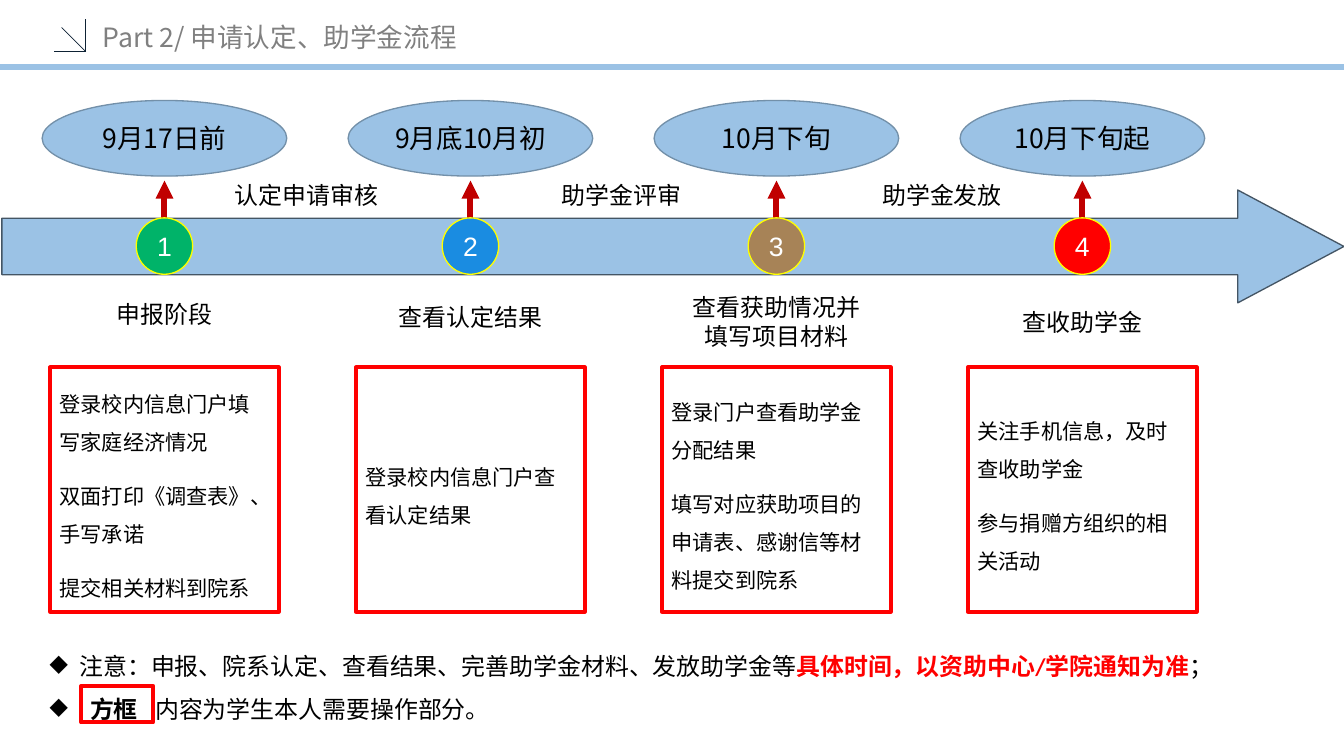
from dataclasses import dataclass

from lxml import etree
from pptx import Presentation
from pptx import util as u
from pptx.dml.color import RGBColor
from pptx.enum import shapes, text
from pptx.oxml import ns

Cm, Pt = u.Cm, u.Pt
MSO, ALIGN, ANCHOR = shapes.MSO_SHAPE, text.PP_ALIGN, text.MSO_ANCHOR


@dataclass(frozen=True)
class Theme:
    blue: str = "9BC2E5"
    navy: str = "0E2234"
    arrow_edge: str = "445564"
    oval_edge: str = "7390A9"
    yellow: str = "FFFF00"
    red: str = "FF0000"
    dark_red: str = "C00000"
    grey: str = "808080"
    black: str = "000000"
    white: str = "FFFFFF"
    cjk: str = "Noto Sans CJK SC"
    digits: str = "Arial"
    notes: str = "Calibri"
    large: int = 20
    label: int = 18
    body: int = 16


T = Theme()
SLIDE_W, SLIDE_H = 35.71, 20.09

# date, badge colour, stage lines, (drop, width, height) of stage label, tasks
STEPS = [
    ("9月17日前", "00B369", ["申报阶段"], (5.18, 3.99, 1.0),
     ["登录校内信息门户填写家庭经济情况", "双面打印《调查表》、手写承诺", "提交相关材料到院系"]),
    ("9月底10月初", "1A8CE1", ["查看认定结果"], (5.25, 4.67, 1.02),
     ["登录校内信息门户查看认定结果"]),
    ("10月下旬", "A78357", ["查看获助情况并", "填写项目材料"], (4.98, 6.07, 1.8),
     ["登录门户查看助学金分配结果", "填写对应获助项目的申请表、感谢信等材料提交到院系"]),
    ("10月下旬起", T.red, ["查收助学金"], (5.38, 3.99, 1.02),
     ["关注手机信息，及时查收助学金", "参与捐赠方组织的相关活动"]),
]
# text, centre, width
TRANSITIONS = [("认定申请审核", 8.14, 4.6), ("助学金评审", 16.52, 3.99),
               ("助学金发放", 25.03, 3.99)]
# each note is a list of (text, format) runs
NOTES = [
    [("注意：申报、院系认定、查看结果、完善助学金材料、发放助学金等", {}),
     ("具体时间，以资助中心/学院通知为准", {"color": T.red, "bold": True}), ("；", {})],
    [(" ", {"spacing": 4}), ("方框", {"bold": True}), (" ", {"spacing": 9}),
     ("内容为学生本人需要操作部分。", {})],
]


def add_run(p, content, size=T.label, font=T.cjk, color=T.black, bold=False, spacing=0):
    r = p.add_run()
    r.text = content
    r.font.size, r.font.name, r.font.bold = Pt(size), font, bold
    r.font.color.rgb = RGBColor.from_string(color)
    rPr = r.font._element
    etree.SubElement(rPr, ns.qn("a:ea")).set("typeface", T.cjk)
    if spacing:
        rPr.set("spc", str(spacing * 100))


def write(sp, paragraphs, align=ALIGN.LEFT, anchor=ANCHOR.MIDDLE, leading=None,
          before=0, bullet=None, **fmt):
    """Fill a shape with paragraphs, each a string or a list of (text, format) runs."""
    tf = sp.text_frame
    tf.word_wrap, tf.vertical_anchor = True, anchor
    for i, runs in enumerate(paragraphs):
        p = tf.add_paragraph() if i else tf.paragraphs[0]
        p.alignment = align
        if leading:
            p.line_spacing = leading
        if before and i:
            p.space_before = Pt(before)
        if bullet:
            pPr = p._p.get_or_add_pPr()
            pPr.set("marL", str(Cm(0.79)))
            pPr.set("indent", str(-Cm(0.79)))
            etree.SubElement(pPr, ns.qn("a:buChar")).set("char", bullet)
        for content, own in [(runs, {})] if isinstance(runs, str) else runs:
            add_run(p, content, **{**fmt, **own})


def add_text(s, x, y, w, h, paragraphs, **fmt):
    write(s.shapes.add_textbox(Cm(x), Cm(y), Cm(w), Cm(h)), paragraphs, **fmt)


def add_shape(s, kind, x, y, w, h, fill=None, line=None, weight=1):
    sp = s.shapes.add_shape(kind, Cm(x), Cm(y), Cm(w), Cm(h))
    sp.shadow.inherit = False
    if fill:
        sp.fill.solid()
        sp.fill.fore_color.rgb = RGBColor.from_string(fill)
    else:
        sp.fill.background()
    if line:
        sp.line.color.rgb = RGBColor.from_string(line)
        sp.line.width = Pt(weight)
    else:
        sp.line.fill.background()
    return sp


def add_line(s, x1, y1, x2, y2, color, weight, arrow=False):
    c = s.shapes.add_connector(shapes.MSO_CONNECTOR.STRAIGHT, Cm(x1), Cm(y1), Cm(x2), Cm(y2))
    c.line.color.rgb = RGBColor.from_string(color)
    c.line.width = Pt(weight)
    if arrow:
        etree.SubElement(c.line._get_or_add_ln(), ns.qn("a:tailEnd")).set("type", "triangle")
    etree.SubElement(c._element.spPr, ns.qn("a:effectLst"))


def header(s, x, y, w, h):
    add_line(s, x, y + h, x + w, y + h, T.blue, 4.5)
    corner_x, corner_y = x + 2.28, y + 1.37
    for dx, dy in [(0.84, 0), (0, 0.86), (0.64, 0.64)]:
        add_line(s, corner_x, corner_y, corner_x - dx, corner_y - dy, T.navy, 0.5)
    add_text(s, x + 2.48, y + 0.38, 10.44, 1.19, ["Part 2/ 申请认定、助学金流程"],
             size=T.large, color=T.grey)


def timeline(s, x, y, w, h):
    sp = add_shape(s, MSO.RIGHT_ARROW, x, y, w, h, T.blue, T.arrow_edge)
    sp.adjustments[1] = 0.941
    for name, centre, width in TRANSITIONS:
        add_text(s, centre - width / 2, y - 0.37, width, 1.02, [name],
                 align=ALIGN.CENTER, anchor=ANCHOR.TOP)


def step_column(s, x, y, w, h, number, step):
    """Date oval, arrow, numbered badge, stage label and task box, top to bottom."""
    date, color, stage, (drop, label_w, label_h), tasks = step
    centre, badge, badge_y = x + w / 2, 1.5, y + 3.12
    task_w, task_h = 6.07, 6.5

    add_line(s, centre, badge_y, centre, y + 2.13, T.dark_red, 4.5, arrow=True)
    oval = add_shape(s, MSO.OVAL, x, y, w, 2.01, T.blue, T.oval_edge)
    write(oval, [date], align=ALIGN.CENTER, size=T.large)
    sp = add_shape(s, MSO.OVAL, centre - badge / 2, badge_y, badge, badge, color, T.yellow)
    write(sp, [str(number)], align=ALIGN.CENTER, size=T.large, font=T.digits, color=T.white)
    add_text(s, centre - label_w / 2, y + drop, label_w, label_h, stage,
             align=ALIGN.CENTER, anchor=ANCHOR.TOP)
    box = add_shape(s, MSO.RECTANGLE, centre - task_w / 2, y + h - task_h, task_w, task_h,
                    T.white, T.red, 3)
    write(box, tasks, leading=1.5, before=12, size=T.body)


def notes_panel(s, x, y, w, h):
    panel = add_shape(s, MSO.RECTANGLE, x, y, w, h, T.white)
    write(panel, NOTES, anchor=ANCHOR.TOP, leading=1.5, bullet="◆", font=T.notes)
    add_shape(s, MSO.RECTANGLE, x + 1.09, y + 1.42, 1.91, 0.97, line=T.red, weight=3)


def main():
    prs = Presentation()
    prs.slide_width, prs.slide_height = Cm(SLIDE_W), Cm(SLIDE_H)
    s = prs.slides.add_slide(prs.slide_layouts[6])
    header(s, 0, 0, SLIDE_W, 1.78)
    timeline(s, 0.05, 5.05, SLIDE_W - 0.05, 3)
    for i, step in enumerate(STEPS):
        step_column(s, 1.12 + 8.13 * i, 2.67, 6.5, 13.59, i + 1, step)
    notes_panel(s, 1.07, 16.81, 32.51, 2.44)
    prs.save("out.pptx")


if __name__ == "__main__":
    main()
